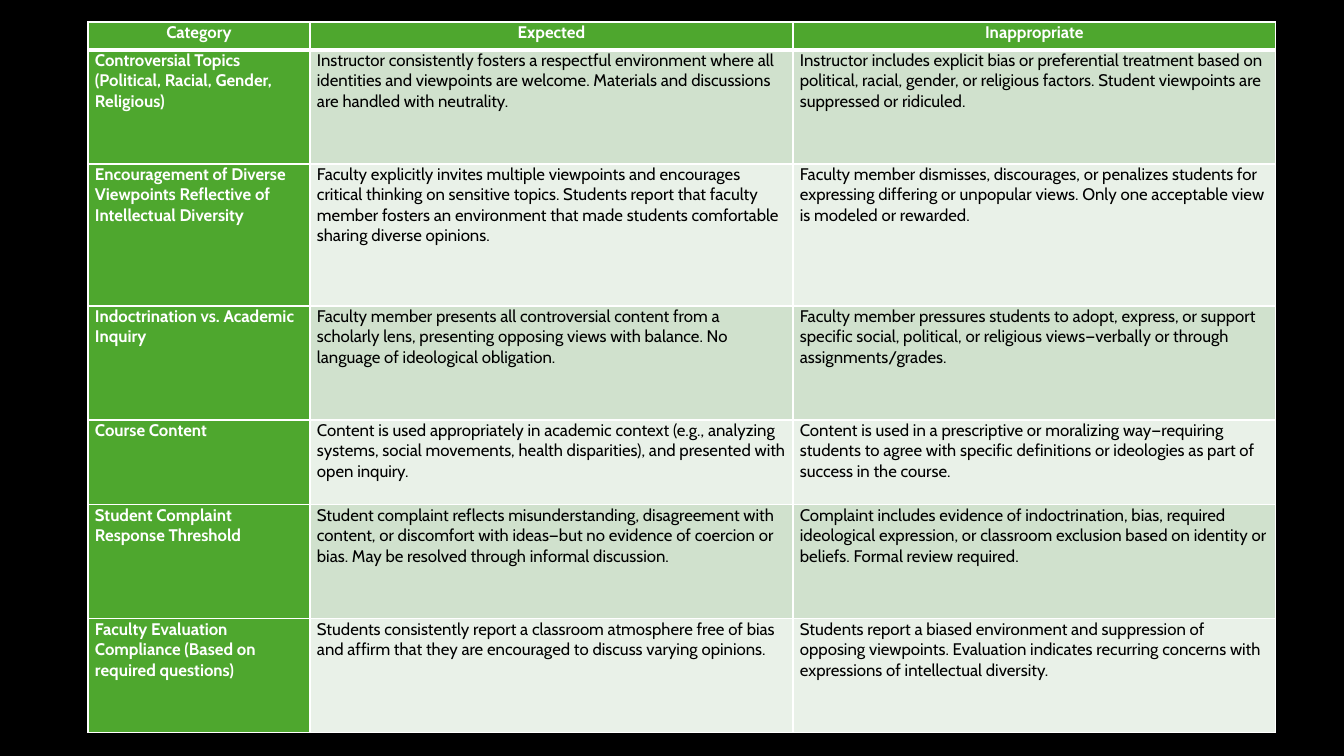
from dataclasses import dataclass

from lxml.etree import SubElement
from pptx import Presentation
from pptx.dml.color import RGBColor
from pptx.enum.text import PP_ALIGN
from pptx.oxml.ns import qn
from pptx.util import Emu, Pt


@dataclass(frozen=True)
class Theme:
    font: str = "Cabin"
    size: int = 12
    background: str = "000000"
    label_fill: str = "4EA72E"
    label_text: str = "FFFFFF"
    body_text: str = "000000"
    bands: tuple = ("D0E1CD", "E9F1E8")
    border: str = "FFFFFF"
    thin: int = 1
    thick: int = 3


THEME = Theme()
PX = 914400 / 100.8


def write(cell, text, color=THEME.body_text, bold=False, align=PP_ALIGN.LEFT):
    paragraph = cell.text_frame.paragraphs[0]
    paragraph.alignment = align
    run = paragraph.add_run()
    run.text = text
    run.font.name = THEME.font
    run.font.size = Pt(THEME.size)
    run.font.bold = bold
    run.font.color.rgb = RGBColor.from_string(color)


def add_border(cell, side, width):
    line = SubElement(cell._tc.get_or_add_tcPr(), qn(f"a:ln{side}"), w=str(Pt(width)))
    fill = SubElement(line, qn("a:solidFill"))
    SubElement(fill, qn("a:srgbClr"), val=THEME.border)


rubric = [
    ("Category", "Expected", "Inappropriate"),
    (
        "Controversial Topics (Political, Racial, Gender, Religious)",
        "Instructor consistently fosters a respectful environment where all identities and viewpoints are welcome. Materials and discussions are handled with neutrality.",
        "Instructor includes explicit bias or preferential treatment based on political, racial, gender, or religious factors. Student viewpoints are suppressed or ridiculed.",
    ),
    (
        "Encouragement of Diverse Viewpoints Reflective of Intellectual Diversity",
        "Faculty explicitly invites multiple viewpoints and encourages critical thinking on sensitive topics. Students report that faculty member fosters an environment that made students comfortable sharing diverse opinions.",
        "Faculty member dismisses, discourages, or penalizes students for expressing differing or unpopular views. Only one acceptable view is modeled or rewarded.",
    ),
    (
        "Indoctrination vs. Academic Inquiry",
        "Faculty member presents all controversial content from a scholarly lens, presenting opposing views with balance. No language of ideological obligation.",
        "Faculty member pressures students to adopt, express, or support specific social, political, or religious views—verbally or through assignments/grades.",
    ),
    (
        "Course Content",
        "Content is used appropriately in academic context (e.g., analyzing systems, social movements, health disparities), and presented with open inquiry.",
        "Content is used in a prescriptive or moralizing way—requiring students to agree with specific definitions or ideologies as part of success in the course.",
    ),
    (
        "Student Complaint Response Threshold",
        "Student complaint reflects misunderstanding, disagreement with content, or discomfort with ideas—but no evidence of coercion or bias. May be resolved through informal discussion.",
        "Complaint includes evidence of indoctrination, bias, required ideological expression, or classroom exclusion based on identity or beliefs. Formal review required.",
    ),
    (
        "Faculty Evaluation Compliance (Based on required questions)",
        "Students consistently report a classroom atmosphere free of bias and affirm that they are encouraged to discuss varying opinions.",
        "Students report a biased environment and suppression of opposing viewpoints. Evaluation indicates recurring concerns with expressions of intellectual diversity.",
    ),
]
column_widths = [222, 483, 483]
row_heights = [28, 114, 142, 114, 85, 114, 114]

presentation = Presentation()
presentation.slide_width = Emu(round(1344 * PX))
presentation.slide_height = Emu(round(756 * PX))
slide = presentation.slides.add_slide(presentation.slide_layouts[6])
slide.background.fill.solid()
slide.background.fill.fore_color.rgb = RGBColor.from_string(THEME.background)

bounds = (88, 22, sum(column_widths), sum(row_heights))
rubric_table = slide.shapes.add_table(
    len(rubric), len(column_widths), *(Emu(round(length * PX)) for length in bounds)
).table
for column, width in zip(rubric_table.columns, column_widths):
    column.width = Emu(round(width * PX))
for row, height in zip(rubric_table.rows, row_heights):
    row.height = Emu(round(height * PX))

for row_index, entries in enumerate(rubric):
    is_header = row_index == 0
    for column_index, entry in enumerate(entries):
        cell = rubric_table.cell(row_index, column_index)
        is_label = is_header or column_index == 0
        cell.margin_left = cell.margin_right = Emu(round(7 * PX))
        cell.margin_top = cell.margin_bottom = 0
        add_border(cell, "L", THEME.thin)
        add_border(cell, "R", THEME.thin)
        add_border(cell, "T", THEME.thick if row_index == 1 else THEME.thin)
        add_border(cell, "B", THEME.thick if is_header else THEME.thin)
        band = THEME.bands[(row_index - 1) % len(THEME.bands)]
        cell.fill.solid()
        cell.fill.fore_color.rgb = RGBColor.from_string(THEME.label_fill if is_label else band)
        write(
            cell,
            entry,
            color=THEME.label_text if is_label else THEME.body_text,
            bold=is_label,
            align=PP_ALIGN.CENTER if is_header else PP_ALIGN.LEFT,
        )

presentation.save("out.pptx")
